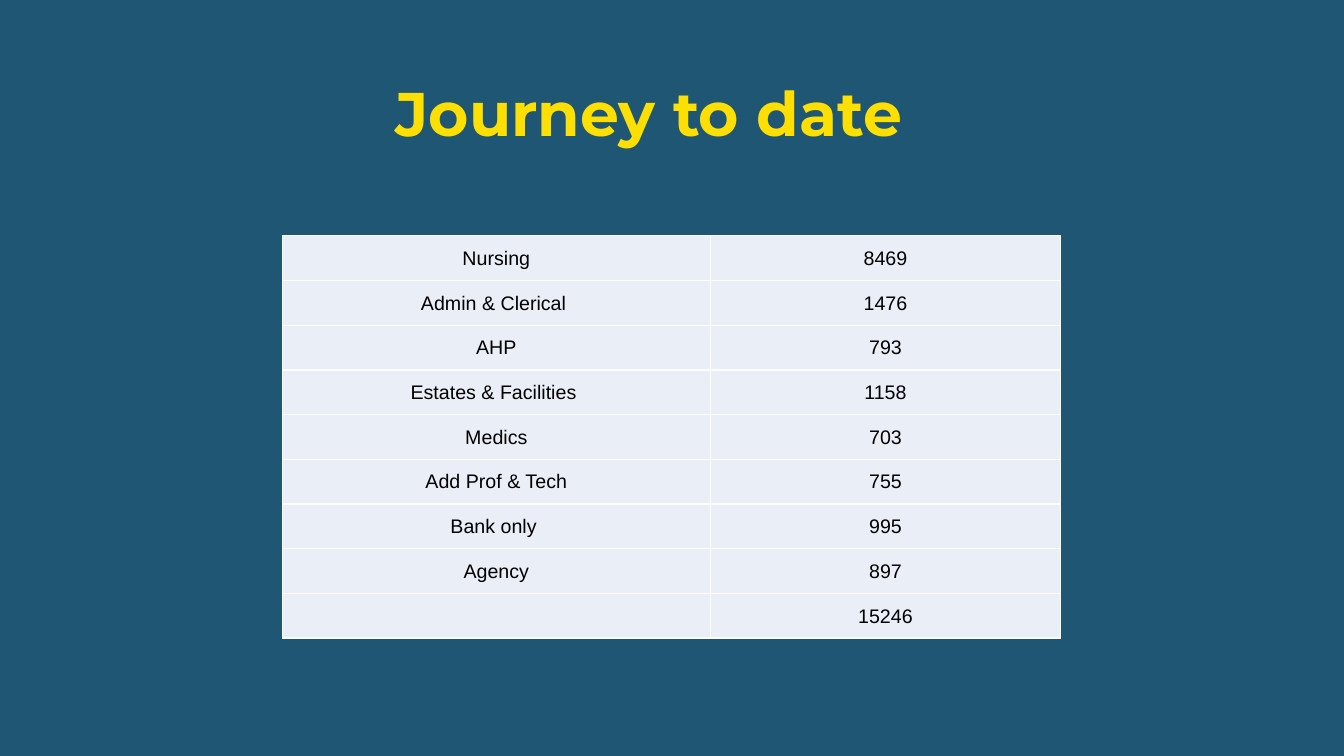
import pptx
import pptx.dml.color
import pptx.enum.text
import pptx.oxml
import pptx.oxml.ns
import pptx.util

Inches = pptx.util.Inches
Pt = pptx.util.Pt
ALIGN = pptx.enum.text.PP_ALIGN
ANCHOR = pptx.enum.text.MSO_ANCHOR

NAVY, GOLD, PALE, WHITE, BLACK = "1F5673", "FDDF03", "EAEFF7", "FFFFFF", "000000"
STAFF = [
    ("Nursing", 8469),
    ("Admin & Clerical ", 1476),
    ("AHP", 793),
    ("Estates & Facilities ", 1158),
    ("Medics", 703),
    ("Add Prof & Tech", 755),
    ("Bank only ", 995),
    ("Agency", 897),
]


def paint(fill, color):
    fill.solid()
    fill.fore_color.rgb = pptx.dml.color.RGBColor.from_string(color)


def write(para, text, font, size, color, bold=False):
    """Add one centred run to the paragraph."""
    para.alignment = ALIGN.CENTER
    run = para.add_run()
    run.text = text
    run.font.name = font
    run.font.size = Pt(size)
    run.font.bold = bold
    paint(run.font.fill, color)


def edge(cell, color, width):
    """Line all four sides; the borders must come before the cell's fill."""
    props = cell._tc.get_or_add_tcPr()
    for spot, side in enumerate("LRTB"):
        line = pptx.oxml.parse_xml(
            f'<a:ln{side} {pptx.oxml.ns.nsdecls("a")} w="{Pt(width)}"><a:solidFill>'
            f'<a:srgbClr val="{color}"/></a:solidFill></a:ln{side}>')
        props.insert(spot, line)


def add_title(slide, text, left, top, width, height):
    title = slide.shapes.title
    title.left, title.top = Inches(left), Inches(top)
    title.width, title.height = Inches(width), Inches(height)
    frame = title.text_frame
    frame.word_wrap = True
    frame.vertical_anchor = ANCHOR.MIDDLE
    para = frame.paragraphs[0]
    para.line_spacing = 0.9
    write(para, text, "Montserrat", 44, GOLD, bold=True)


def fill_cell(cell, text):
    cell.margin_left = cell.margin_right = cell.margin_top = Inches(0.01)
    cell.margin_bottom = 0
    cell.vertical_anchor = ANCHOR.MIDDLE
    paint(cell.fill, PALE)
    edge(cell, WHITE, 1)
    if text:
        write(cell.text_frame.paragraphs[0], text, "Arial", 14, BLACK)


def add_counts(slide, staff, left, top, width, height):
    """Table of head counts, closed by a row with their total."""
    rows = staff + [("", sum(count for _, count in staff))]
    table = slide.shapes.add_table(
        len(rows), 2, Inches(left), Inches(top), Inches(width), Inches(height)).table
    table.first_row = table.horz_banding = False
    for col, share in zip(table.columns, (0.55, 0.45)):
        col.width = Inches(width * share)
    for row, (group, count) in enumerate(rows):
        fill_cell(table.cell(row, 0), group)
        fill_cell(table.cell(row, 1), str(count))


def main():
    deck = pptx.Presentation()
    deck.slide_width, deck.slide_height = Inches(13.33), Inches(7.5)
    slide = deck.slides.add_slide(deck.slide_layouts[5])
    paint(slide.background.fill, NAVY)
    add_title(slide, "Journey to date", 1.12, 0.64, 10.63, 1.04)
    add_counts(slide, STAFF, 2.8, 2.34, 7.72, 3.99)
    deck.save("out.pptx")


if __name__ == "__main__":
    main()
